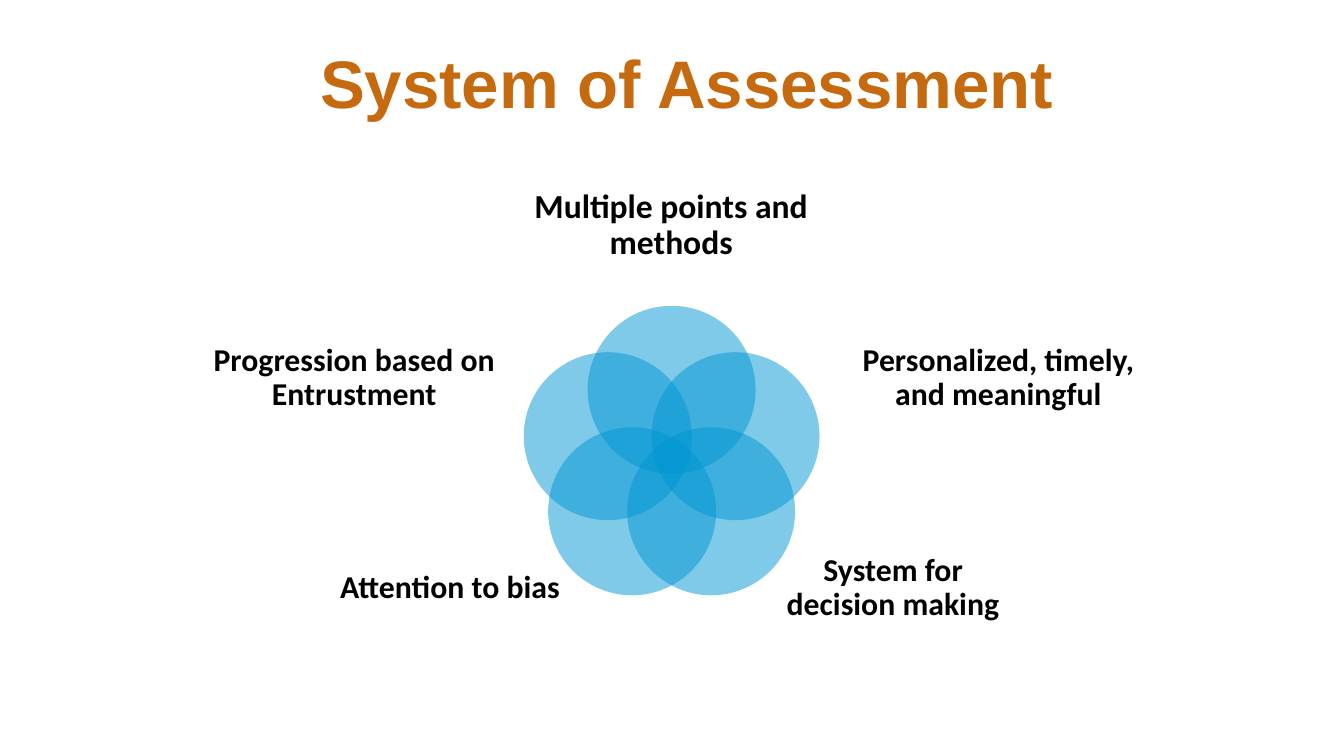
import math

import pptx
import pptx.dml.color
import pptx.enum.shapes
import pptx.enum.text
import pptx.oxml
import pptx.oxml.ns
import pptx.util

Pt = pptx.util.Pt
ORANGE = pptx.dml.color.RGBColor(0xC5, 0x6A, 0x0F)
BLUE = pptx.dml.color.RGBColor(0x00, 0x96, 0xD3)
BLACK = pptx.dml.color.RGBColor(0, 0, 0)

HEADING = "System of Assessment"
PRINCIPLES = [
    ("Multiple points and methods", 18, (259.9, 90.7, 199.4, 60.5)),
    ("Personalized, timely, and meaningful", 17, (451.4, 169.9, 167, 65.5)),
    ("System for decision making", 17, (410.4, 282.2, 136.1, 65.5)),
    ("Attention to bias", 17, (174.2, 282.2, 133.9, 65.5)),
    ("Progression based on Entrustment", 17, (106.6, 169.9, 166.3, 65.5)),
]
RING_X, RING_Y, RING_RADIUS = 359.8, 244.8, 36
DIAMETER = 90


def write(frame, wording, font_name, size, color):
    frame.word_wrap = True
    frame.auto_size = pptx.enum.text.MSO_AUTO_SIZE.NONE
    frame.vertical_anchor = pptx.enum.text.MSO_ANCHOR.MIDDLE
    paragraph = frame.paragraphs[0]
    paragraph.alignment = pptx.enum.text.PP_ALIGN.CENTER
    paragraph.line_spacing = 0.9
    run = paragraph.add_run()
    run.text = wording
    run.font.name = font_name
    run.font.size = Pt(size)
    run.font.bold = True
    run.font.color.rgb = color


def add_circle(shapes, angle):
    left = RING_X + RING_RADIUS * math.sin(angle) - DIAMETER / 2
    top = RING_Y - RING_RADIUS * math.cos(angle) - DIAMETER / 2
    circle = shapes.add_shape(
        pptx.enum.shapes.MSO_SHAPE.OVAL, Pt(left), Pt(top), Pt(DIAMETER), Pt(DIAMETER)
    )
    circle.shadow.inherit = False
    circle.line.fill.background()
    circle.fill.solid()
    circle.fill.fore_color.rgb = BLUE
    tint = circle.fill._xPr.find(".//" + pptx.oxml.ns.qn("a:srgbClr"))
    tint.append(pptx.oxml.parse_xml(
        f'<a:alpha {pptx.oxml.ns.nsdecls("a")} val="50000"/>'
    ))


def add_label(shapes, wording, size, box):
    frame = shapes.add_textbox(*map(Pt, box)).text_frame
    frame.margin_left = frame.margin_right = 0
    frame.margin_top = frame.margin_bottom = 0
    write(frame, wording, "Calibri", size, BLACK)


def main():
    deck = pptx.Presentation()
    deck.slide_width, deck.slide_height = Pt(720), Pt(405)
    slide = deck.slides.add_slide(deck.slide_layouts[5])

    title = slide.shapes.title
    title.left, title.top, title.width, title.height = map(Pt, (57.6, 7.2, 620.6, 78.5))
    write(title.text_frame, HEADING, "Arial", 36, ORANGE)

    venn = slide.shapes.add_group_shape().shapes
    for index, (wording, size, box) in enumerate(PRINCIPLES):
        add_circle(venn, index * math.tau / len(PRINCIPLES))
        add_label(venn, wording, size, box)

    deck.save("out.pptx")


if __name__ == "__main__":
    main()
